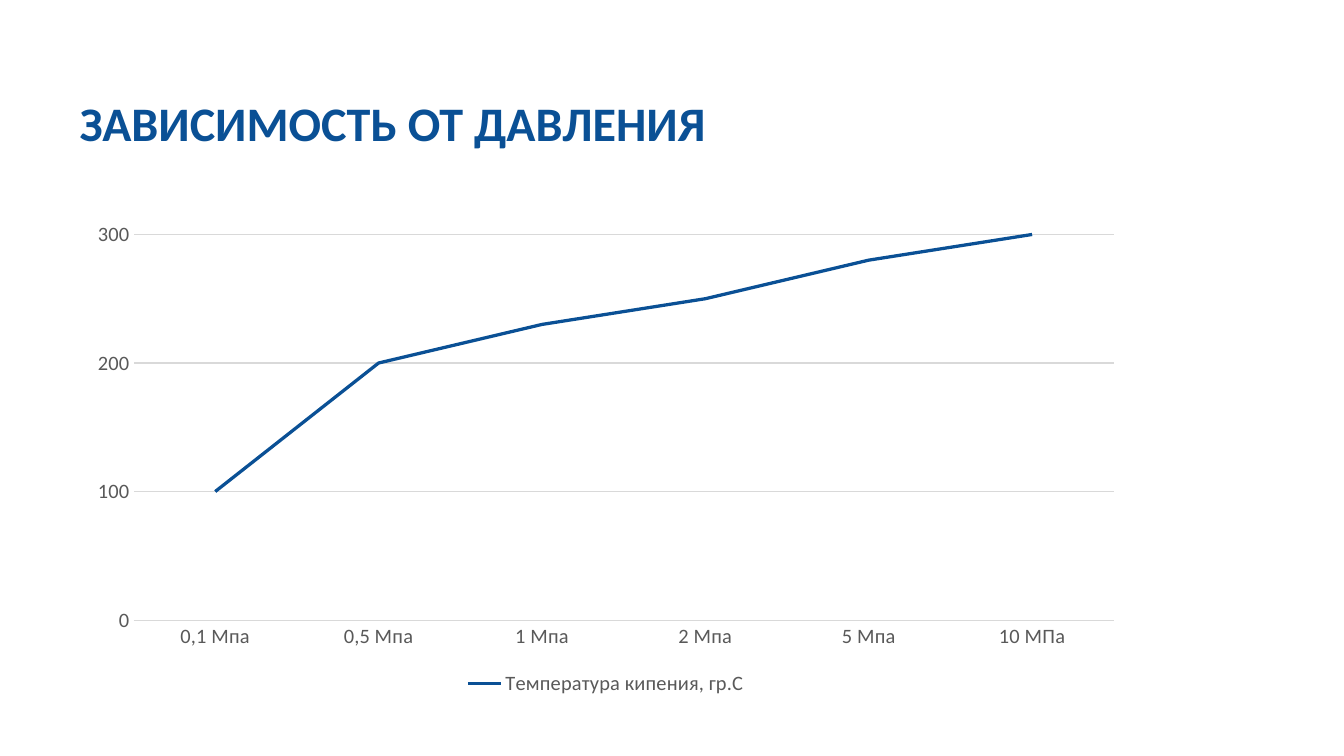
import pptx
import pptx.chart.data
import pptx.dml.color
import pptx.enum.chart
import pptx.enum.text
import pptx.util

COLUMNS, ROWS = 128, 72
BLUE, GREY, RULE = "0A5095", "595959", "D9D9D9"
BOILING_POINTS = {
    "0,1 Мпа": 100,
    "0,5 Мпа": 200,
    "1 Мпа": 230,
    "2 Мпа": 250,
    "5 Мпа": 280,
    "10 МПа": 300,
}


def colour(value):
    return pptx.dml.color.RGBColor.from_string(value)


def apply(target, formats):
    for name, value in formats.items():
        setattr(target, name, value)


class PressureSlide:
    """Holds the style and the current slide, placing elements on a 128 by 72 grid."""

    font_name = "Calibri"

    def __init__(self, deck):
        self.column = deck.slide_width / COLUMNS
        self.row = deck.slide_height / ROWS
        self.slide = deck.slides.add_slide(deck.slide_layouts[6])

    def area(self, left, top, width, height):
        units = (self.column, self.row) * 2
        return [round(n * unit) for n, unit in zip((left, top, width, height), units)]

    def style_font(self, font, size, shade, bold=False):
        apply(font, {"name": self.font_name, "size": pptx.util.Pt(size), "bold": bold})
        font.color.rgb = colour(shade)

    def style_line(self, line, shade, width):
        line.color.rgb = colour(shade)
        line.width = pptx.util.Pt(width)

    def heading(self, text, area, size):
        frame = self.slide.shapes.add_textbox(*self.area(*area)).text_frame
        apply(frame, {
            "word_wrap": True,
            "auto_size": pptx.enum.text.MSO_AUTO_SIZE.SHAPE_TO_FIT_TEXT,
        })
        paragraph = frame.paragraphs[0]
        paragraph.line_spacing = pptx.util.Pt(size)
        title = paragraph.add_run()
        title.text = text
        self.style_font(title.font, size, BLUE, bold=True)

    def line_chart(self, series_name, points, area):
        table = pptx.chart.data.CategoryChartData(number_format="General")
        table.categories = list(points)
        table.add_series(series_name, list(points.values()))
        chart = self.slide.shapes.add_chart(
            pptx.enum.chart.XL_CHART_TYPE.LINE, *self.area(*area), table
        ).chart
        self.style_font(chart.font, 10, "000000")
        apply(chart, {"has_title": False, "has_legend": True})
        apply(chart.legend, {
            "position": pptx.enum.chart.XL_LEGEND_POSITION.BOTTOM,
            "include_in_layout": False,
        })
        self.style_font(chart.legend.font, 14, GREY)
        chart.plots[0].vary_by_categories = False
        curve = chart.plots[0].series[0]
        curve.smooth = False
        curve.marker.style = pptx.enum.chart.XL_MARKER_STYLE.NONE
        self.style_line(curve.format.line, BLUE, 2.25)
        self.axes(chart.category_axis, chart.value_axis)

    def axes(self, pressure, temperature):
        no_tick = pptx.enum.chart.XL_TICK_MARK.NONE
        for axis in (pressure, temperature):
            apply(axis, {"major_tick_mark": no_tick, "minor_tick_mark": no_tick})
            self.style_font(axis.tick_labels.font, 14, GREY)
        apply(temperature, {
            "minimum_scale": 0,
            "maximum_scale": 300,
            "major_unit": 100,
            "has_major_gridlines": True,
        })
        temperature.format.line.fill.background()
        for line in (pressure.format.line, temperature.major_gridlines.format.line):
            self.style_line(line, RULE, 0.75)


def main():
    deck = pptx.Presentation()
    deck.slide_width = pptx.util.Inches(12.8)
    deck.slide_height = pptx.util.Inches(7.2)
    page = PressureSlide(deck)
    page.heading("ЗАВИСИМОСТЬ ОТ ДАВЛЕНИЯ", (6.6, 9.3, 74.8, 5.7), 33)
    page.line_chart("Температура кипения, гр.С", BOILING_POINTS, (7.3, 20.2, 100.8, 46.5))
    deck.save("out.pptx")


if __name__ == "__main__":
    main()
